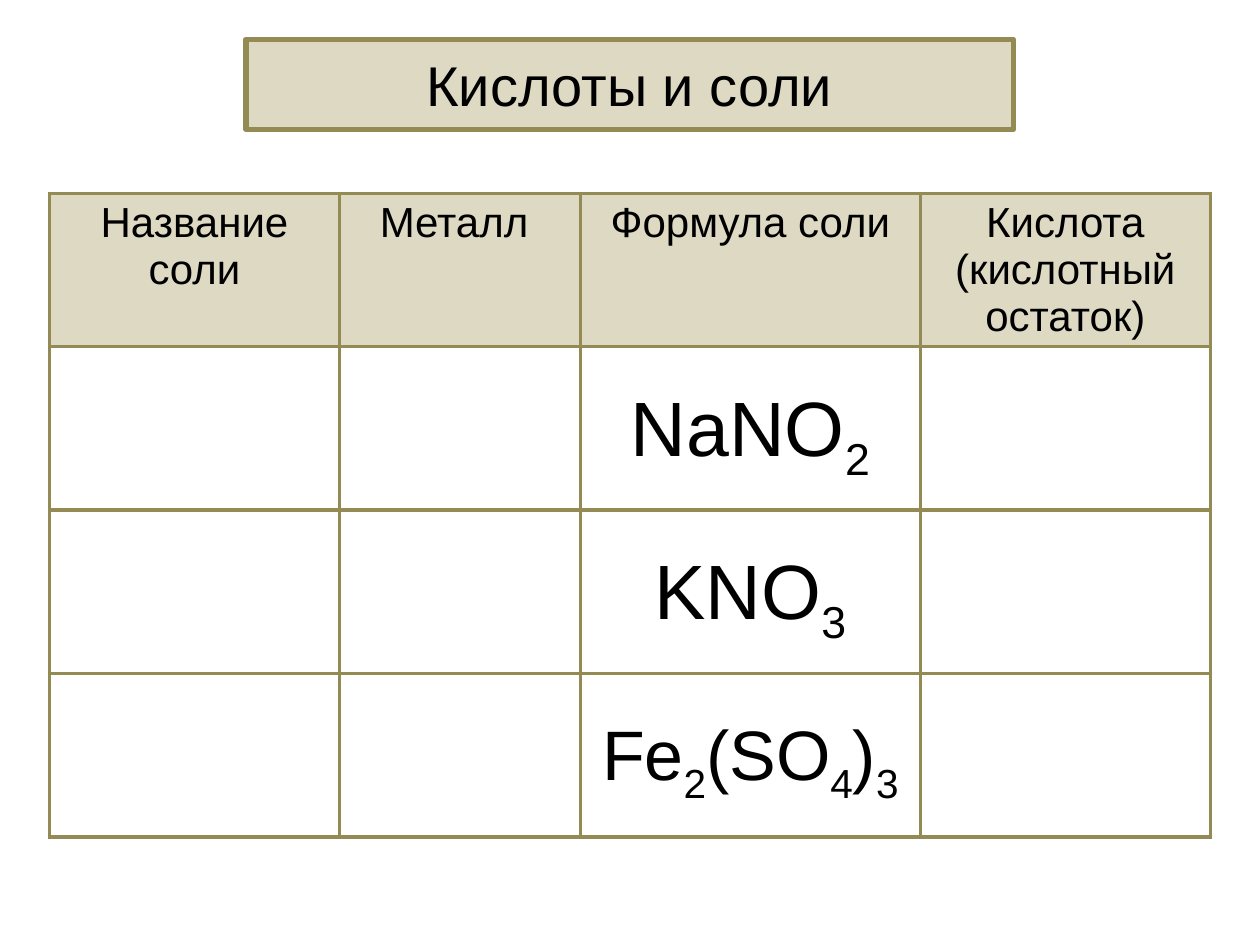
from dataclasses import dataclass
from itertools import groupby

from lxml.etree import SubElement
from pptx import Presentation
from pptx.dml.color import RGBColor
from pptx.enum.shapes import MSO_SHAPE
from pptx.enum.text import MSO_ANCHOR, PP_ALIGN
from pptx.oxml import parse_xml
from pptx.oxml.ns import nsdecls, qn
from pptx.util import Pt


@dataclass(frozen=True)
class Theme:
    font: str = "Arial"
    text: RGBColor = RGBColor(0x00, 0x00, 0x00)
    sand: RGBColor = RGBColor(0xDD, 0xD9, 0xC3)
    olive: RGBColor = RGBColor(0x94, 0x8A, 0x54)
    title_size: int = 32
    header_size: int = 24
    formula_size: int = 44
    long_formula_size: int = 40
    title_line: float = 3
    table_line: float = 2.25


def write_text(frame, text, *, theme, size, line_spacing=None, formula=False):
    """Write one centred paragraph; in a formula the digits become subscripts."""
    paragraph = frame.paragraphs[0]
    paragraph.alignment = PP_ALIGN.CENTER
    if line_spacing:
        paragraph.line_spacing = line_spacing
    for is_digit, characters in groupby(text, key=str.isdigit):
        run = paragraph.add_run()
        run.text = "".join(characters)
        run.font.name = theme.font
        run.font.size = Pt(size)
        run.font.color.rgb = theme.text
        if formula and is_digit:
            run.font._element.set("baseline", "-25000")
        if not formula:
            run.text = text
            break


def draw_borders(cell, color, width):
    properties = cell._tc.get_or_add_tcPr()
    for index, side in enumerate(("lnL", "lnR", "lnT", "lnB")):
        line = parse_xml(f'<a:{side} {nsdecls("a")} w="{Pt(width)}"/>')
        fill = SubElement(line, qn("a:solidFill"))
        SubElement(fill, qn("a:srgbClr"), val=str(color))
        properties.insert(index, line)


class SlideBuilder:
    def __init__(self, presentation, theme):
        self.theme = theme
        self.slide = presentation.slides.add_slide(presentation.slide_layouts[6])

    def title_box(self, text, left, top, width, height):
        shape = self.slide.shapes.add_shape(
            MSO_SHAPE.ROUNDED_RECTANGLE, Pt(left), Pt(top), Pt(width), Pt(height))
        shape.adjustments[0] = 0
        shape.shadow.inherit = False
        shape.fill.solid()
        shape.fill.fore_color.rgb = self.theme.sand
        shape.line.color.rgb = self.theme.olive
        shape.line.width = Pt(self.theme.title_line)
        frame = shape.text_frame
        frame.word_wrap = True
        frame.vertical_anchor = MSO_ANCHOR.MIDDLE
        write_text(frame, text, theme=self.theme, size=self.theme.title_size)

    def table(self, left, top, column_widths, row_heights):
        """Add an empty, bordered grid."""
        table = self.slide.shapes.add_table(
            len(row_heights), len(column_widths), Pt(left), Pt(top),
            Pt(sum(column_widths)), Pt(sum(row_heights))).table
        table.first_row = table.horz_banding = False
        for column, width in zip(table.columns, column_widths):
            column.width = Pt(width)
        for row, height in zip(table.rows, row_heights):
            row.height = Pt(height)
        for cell in table.iter_cells():
            cell.fill.background()
            draw_borders(cell, self.theme.olive, self.theme.table_line)
        return table

    def header_cell(self, cell, text):
        cell.fill.solid()
        cell.fill.fore_color.rgb = self.theme.sand
        write_text(cell.text_frame, text, theme=self.theme, size=self.theme.header_size)

    def formula_cell(self, cell, formula, size):
        cell.vertical_anchor = MSO_ANCHOR.MIDDLE
        cell.margin_left = cell.margin_right = Pt(5)
        cell.margin_top = cell.margin_bottom = 0
        write_text(cell.text_frame, formula, theme=self.theme, size=size,
                   line_spacing=1.15, formula=True)


def main():
    presentation = Presentation()
    presentation.slide_width = Pt(720)
    presentation.slide_height = Pt(540)
    theme = Theme()
    builder = SlideBuilder(presentation, theme)

    builder.title_box("Кислоты и соли", 140.5, 22.5, 438.5, 51.5)

    headers = ["Название соли", "Металл ", "Формула соли", "Кислота (кислотный остаток)"]
    formulas = [
        ("NaNO2", theme.formula_size),
        ("KNO3", theme.formula_size),
        ("Fe2(SO4)3", theme.long_formula_size),
    ]
    table = builder.table(28.3, 110.4, [165.7, 137.7, 194.3, 165.7],
                          [87.4] + [93.5] * len(formulas))
    for column, header in enumerate(headers):
        builder.header_cell(table.cell(0, column), header)
    formula_column = headers.index("Формула соли")
    for row, (formula, size) in enumerate(formulas, start=1):
        builder.formula_cell(table.cell(row, formula_column), formula, size)

    presentation.save("out.pptx")


if __name__ == "__main__":
    main()
